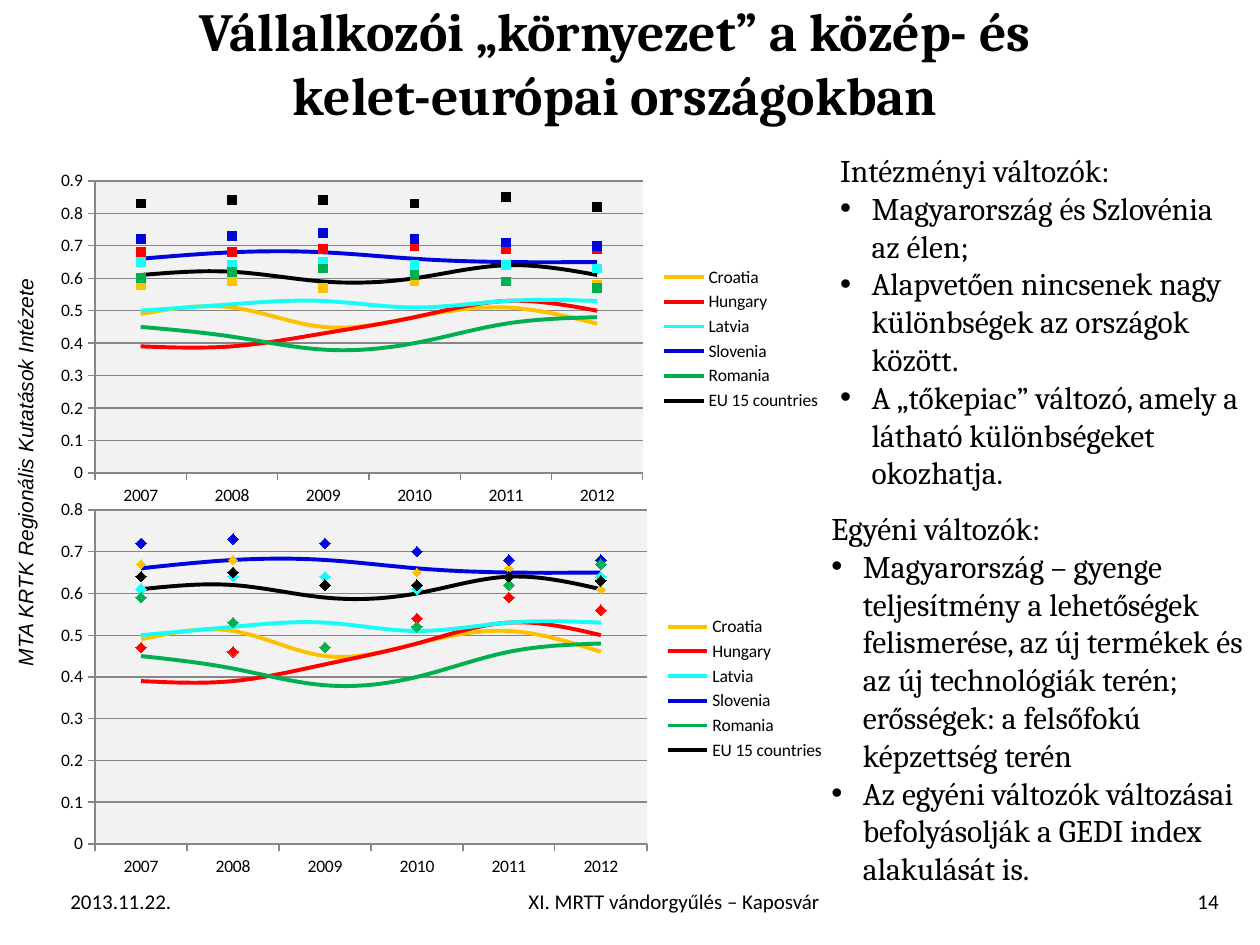
from lxml import etree
from pptx import Presentation
from pptx import util as u
from pptx.chart.data import CategoryChartData
from pptx.dml.color import RGBColor
from pptx.enum import chart as ch, text
from pptx.oxml import parse_xml
from pptx.oxml.ns import nsdecls, qn

THEME = {
    "ink": "000000", "plot": "F2F2F2", "grid": "868686",
    "heading": {"name": "Cambria", "size": 30.6, "bold": True},
    "body": {"name": "Cambria", "size": 18},
    "footer": {"name": "Calibri", "size": 12},
    "side": {"name": "Arial", "size": 12, "italic": True},
    "chart": {"name": "Calibri", "size": 10},
    "line": 2.25, "hairline": 0.75, "indent": 18,
}
LEFT, CENTER, RIGHT = text.PP_ALIGN.LEFT, text.PP_ALIGN.CENTER, text.PP_ALIGN.RIGHT
TOP, MIDDLE = text.MSO_ANCHOR.TOP, text.MSO_ANCHOR.MIDDLE

# Content: boxes are left, top, width, height in points
INSTITUTE = "MTA KRTK Regionális Kutatások Intézete"
TITLE = "Vállalkozói „környezet” a közép- és kelet-európai országokban"
FOOTERS = [
    ("2013.11.22.", (33.1, 500.4, 77, 28.8), LEFT),
    ("XI. MRTT vándorgyűlés – Kaposvár", (115.9, 500.4, 538.6, 28.8), CENTER),
    ("14", (654.5, 500.4, 49, 28.8), RIGHT),
]
COMMENTS = [
    ("Intézményi változók:", (473, 82.8, 247, 203.8), [
        "Magyarország és Szlovénia az élen;",
        "Alapvetően nincsenek nagy különbségek az országok között.",
        "A „tőkepiac” változó, amely a látható különbségeket okozhatja.",
    ]),
    ("Egyéni változók:", (468, 287.3, 252, 225.4), [
        "Magyarország – gyenge teljesítmény a lehetőségek felismerése, az új termékek "
        "és az új technológiák terén; erősségek: a felsőfokú képzettség terén",
        "Az egyéni változók változásai befolyásolják a GEDI index alakulását is.",
    ]),
]
YEARS = ["2007", "2008", "2009", "2010", "2011", "2012"]
COUNTRIES = [  # name, colour, values of the curve shown in both charts
    ("Croatia", "FFC000", (0.49, 0.51, 0.45, 0.48, 0.51, 0.46)),
    ("Hungary", "FF0000", (0.39, 0.39, 0.43, 0.48, 0.53, 0.5)),
    ("Latvia", "18FCF7", (0.5, 0.52, 0.53, 0.51, 0.53, 0.53)),
    ("Slovenia", "0005DE", (0.66, 0.68, 0.68, 0.66, 0.65, 0.65)),
    ("Romania", "00B050", (0.45, 0.42, 0.38, 0.4, 0.46, 0.48)),
    ("EU 15 countries", "000000", (0.61, 0.62, 0.59, 0.6, 0.64, 0.61)),
]
CHARTS = [
    {"box": (25.2, 94.3, 451.4, 198.7), "plot": (54.3, 103.4, 313.1, 166.9),
     "top": 0.9, "marker": ch.XL_MARKER_STYLE.SQUARE, "sizes": [5] * 6,
     "points": [
         (0.58, 0.59, 0.57, 0.59, 0.59, 0.58),
         (0.68, 0.68, 0.69, 0.7, 0.69, 0.69),
         (0.65, 0.64, 0.65, 0.64, 0.64, 0.63),
         (0.72, 0.73, 0.74, 0.72, 0.71, 0.7),
         (0.6, 0.62, 0.63, 0.61, 0.59, 0.57),
         (0.83, 0.84, 0.84, 0.83, 0.85, 0.82)]},
    {"box": (25.2, 281.5, 453.6, 223.9), "plot": (54.3, 291.4, 315.4, 190.9),
     "top": 0.8, "marker": ch.XL_MARKER_STYLE.DIAMOND, "sizes": [5] + [6] * 5,
     "points": [
         (0.67, 0.68, 0.62, 0.65, 0.66, 0.61),
         (0.47, 0.46, 0.47, 0.54, 0.59, 0.56),
         (0.61, 0.64, 0.64, 0.61, 0.64, 0.64),
         (0.72, 0.73, 0.72, 0.7, 0.68, 0.68),
         (0.59, 0.53, 0.47, 0.52, 0.62, 0.67),
         (0.64, 0.65, 0.62, 0.62, 0.64, 0.63)]},
]


def set_all(target, values):
    for key, value in values.items():
        setattr(target, key, value)


def style_font(font, style):
    set_all(font, {**THEME[style], "size": u.Pt(THEME[style]["size"])})
    font.color.rgb = RGBColor.from_string(THEME["ink"])


def paint(fill, colour):
    fill.solid()
    fill.fore_color.rgb = RGBColor.from_string(colour)


def add_text(slide, lines, box, style, align=LEFT, anchor=TOP, bullets_from=None):
    holder = slide.shapes.add_textbox(*map(u.Pt, box))
    frame = holder.text_frame
    set_all(frame, {"word_wrap": True, "vertical_anchor": anchor})
    for i, line in enumerate(lines):
        para = frame.paragraphs[0] if i == 0 else frame.add_paragraph()
        para.alignment = align
        if bullets_from is not None and i >= bullets_from:
            props = para._p.get_or_add_pPr()
            props.set("marL", str(u.Pt(THEME["indent"])))
            props.set("indent", str(-u.Pt(THEME["indent"])))
            etree.SubElement(props, qn("a:buFont"), typeface="Arial")
            etree.SubElement(props, qn("a:buChar"), char="•")
        run = para.add_run()
        run.text = line
        style_font(run.font, style)
    return holder


def place_plot(chart, box, plot):
    """Fix the inner plot area and give it its fill."""
    area = chart._chartSpace.chart.plotArea
    for old in area.findall(qn("c:layout")):
        area.remove(old)
    shares = {"x": (plot[0] - box[0]) / box[2], "y": (plot[1] - box[1]) / box[3],
              "w": plot[2] / box[2], "h": plot[3] / box[3]}
    sizes = "".join(f'<c:{key} val="{share:.4f}"/>' for key, share in shares.items())
    area.insert(0, parse_xml(
        f'<c:layout {nsdecls("c")}><c:manualLayout><c:layoutTarget val="inner"/>'
        f'<c:xMode val="edge"/><c:yMode val="edge"/>{sizes}</c:manualLayout></c:layout>'))
    area.append(parse_xml(
        f'<c:spPr {nsdecls("c", "a")}><a:solidFill><a:srgbClr val="{THEME["plot"]}"/>'
        '</a:solidFill></c:spPr>'))


def add_index_chart(slide, spec_):
    data = CategoryChartData()
    data.categories = YEARS
    for country, _, values in COUNTRIES:
        data.add_series(country, values)
    for number, values in enumerate(spec_["points"], len(COUNTRIES) + 1):
        data.add_series(f"Series {number}", values)
    chart = slide.shapes.add_chart(
        ch.XL_CHART_TYPE.LINE, *map(u.Pt, spec_["box"]), data).chart
    set_all(chart, {"has_title": False, "has_legend": True})
    style_font(chart.font, "chart")
    chart.plots[0].vary_by_categories = False

    # Curves first, then loose markers in the same country colours
    for i, series in enumerate(chart.plots[0].series):
        colour = COUNTRIES[i % len(COUNTRIES)][1]
        series.smooth = True
        if i < len(COUNTRIES):
            series.format.line.width = u.Pt(THEME["line"])
            paint(series.format.line.fill, colour)
        else:
            series.format.line.fill.background()
            set_all(series.marker, {"style": spec_["marker"],
                                    "size": spec_["sizes"][i - len(COUNTRIES)]})
            paint(series.marker.format.fill, colour)
            paint(series.marker.format.line.fill, colour)

    # Axes
    scale = chart.value_axis
    set_all(scale, {"minimum_scale": 0, "maximum_scale": spec_["top"],
                    "major_unit": 0.1, "has_major_gridlines": True})
    set_all(scale.tick_labels, {"number_format": "General",
                                "number_format_is_linked": False})
    for axis in (scale, chart.category_axis):
        axis.major_tick_mark = ch.XL_TICK_MARK.OUTSIDE
    for rule in (scale, chart.category_axis, scale.major_gridlines):
        rule.format.line.width = u.Pt(THEME["hairline"])
        paint(rule.format.line.fill, THEME["grid"])

    # Legend lists the curves only
    set_all(chart.legend, {"position": ch.XL_LEGEND_POSITION.RIGHT,
                           "include_in_layout": False})
    position = chart.legend._element.find(qn("c:legendPos"))
    for i in reversed(range(len(COUNTRIES), 2 * len(COUNTRIES))):
        position.addnext(parse_xml(
            f'<c:legendEntry {nsdecls("c")}><c:idx val="{i}"/>'
            '<c:delete val="1"/></c:legendEntry>'))
    place_plot(chart, spec_["box"], spec_["plot"])


def main():
    deck = Presentation()
    set_all(deck, {"slide_width": u.Pt(720), "slide_height": u.Pt(540)})
    slide = deck.slides.add_slide(deck.slide_layouts[6])

    # Side label and title
    institute = add_text(slide, [INSTITUTE], (-255.6, 259.2, 540, 21.6), "side", CENTER)
    institute.rotation = 270
    add_text(slide, [TITLE], (76.3, 0, 550.1, 71.3), "heading", CENTER, MIDDLE)

    for index_chart in CHARTS:
        add_index_chart(slide, index_chart)
    for heading, box, remarks in COMMENTS:
        add_text(slide, [heading, *remarks], box, "body", bullets_from=1)
    for footer, box, align in FOOTERS:
        add_text(slide, [footer], box, "footer", align, MIDDLE)
    deck.save("out.pptx")


if __name__ == "__main__":
    main()
